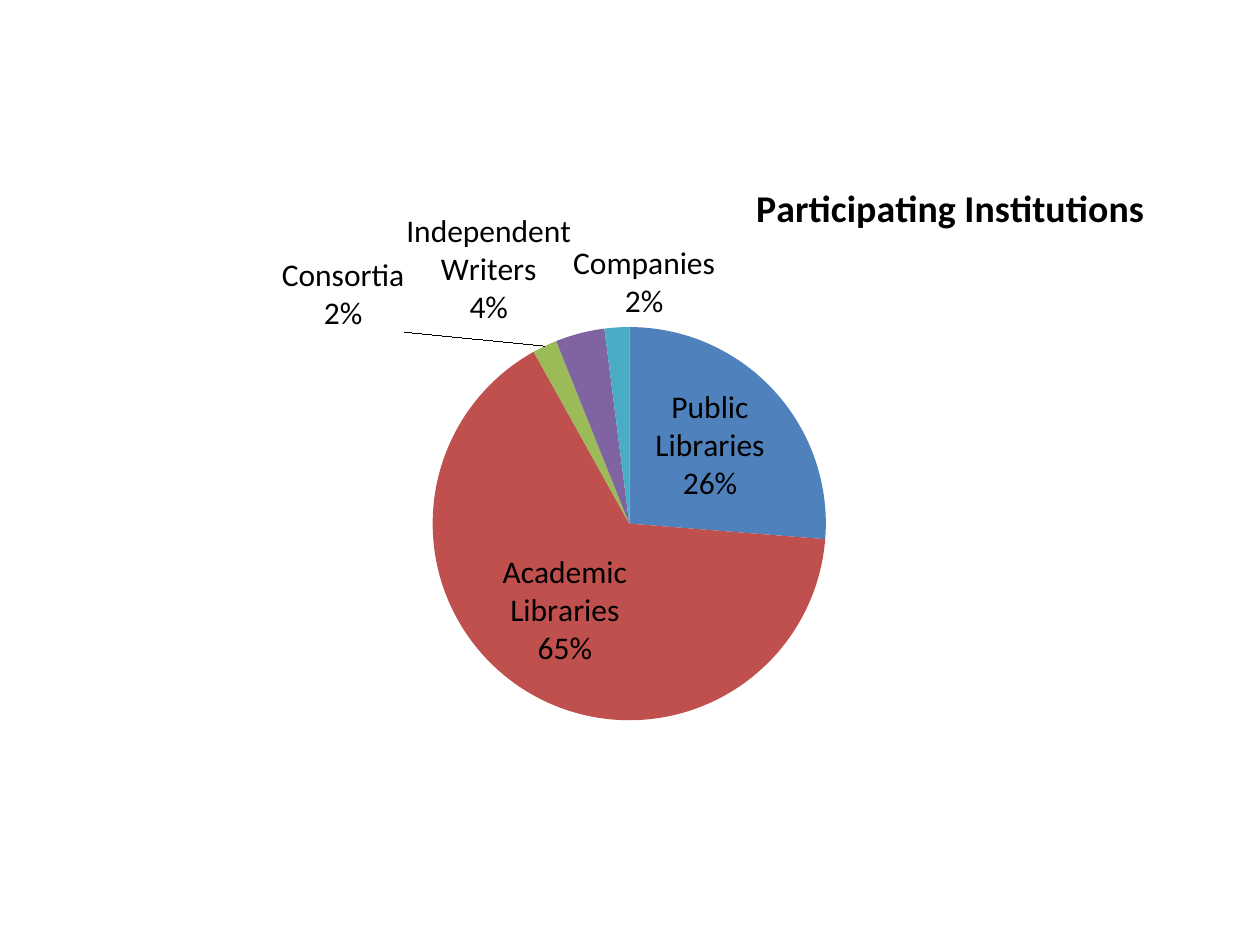
from typing import NamedTuple

from lxml import etree
from pptx import Presentation
from pptx import util as u
from pptx.chart.data import CategoryChartData
from pptx.dml.color import RGBColor
from pptx.enum import chart as ch
from pptx.oxml import ns

COLORS = {
    "text": "000000",
    "blue": "4F81BD",
    "red": "C0504D",
    "green": "9BBB59",
    "purple": "8064A2",
    "aqua": "4BACC6",
}
FONT = "Calibri"


class Institution(NamedTuple):
    category: str
    percent: int
    color: str


INSTITUTIONS = [
    Institution("Public Libraries", 26, "blue"),
    Institution("Academic Libraries", 65, "red"),
    Institution("Consortia", 2, "green"),
    Institution("Independent Writers", 4, "purple"),
    Institution("Companies", 2, "aqua"),
]


def rgb(name: str) -> RGBColor:
    return RGBColor.from_string(COLORS[name])


def style_font(font, size: float, bold: bool = False) -> None:
    font.name = FONT
    font.size = u.Pt(size)
    font.bold = bold
    font.color.rgb = rgb("text")


def manual_layout(**settings) -> etree._Element:
    """Layout element; settings are given in schema order."""
    layout = etree.Element(ns.qn("c:layout"))
    manual = etree.SubElement(layout, ns.qn("c:manualLayout"))
    for tag, value in settings.items():
        etree.SubElement(manual, ns.qn(f"c:{tag}")).set("val", str(value))
    return layout


def place(parent, layout: etree._Element, index: int) -> None:
    """Put the layout at its place, instead of any earlier one."""
    for earlier in parent.findall(ns.qn("c:layout")):
        parent.remove(earlier)
    parent.insert(index, layout)


def add_institution_pie(slide) -> None:
    shares = CategoryChartData(number_format="0")
    shares.categories = [item.category for item in INSTITUTIONS]
    shares.add_series("Series 1", [item.percent for item in INSTITUTIONS])
    pie = slide.shapes.add_chart(
        ch.XL_CHART_TYPE.PIE, u.Inches(0.5), u.Inches(0.92),
        u.Inches(9.08), u.Inches(5.78), shares).chart
    style_font(pie.font, 18)
    pie.has_legend = False

    # Title at the upper right
    heading = pie.chart_title
    run = heading.text_frame.paragraphs[0].add_run()
    run.text = "Participating Institutions"
    style_font(run.font, 21.6, bold=True)
    heading.include_in_layout = False
    place(heading._element, manual_layout(
        xMode="edge", yMode="edge", x=0.6, y=0.08), 1)

    # Slices
    plot = pie.plots[0]
    plot.vary_by_categories = True
    place(plot._element.getparent(), manual_layout(
        layoutTarget="inner", xMode="edge", yMode="edge",
        x=0.32, y=0.29, w=0.35, h=0.54), 0)
    series = plot.series[0]
    for index, item in enumerate(INSTITUTIONS):
        fill = series.points[index].format.fill
        fill.solid()
        fill.fore_color.rgb = rgb(item.color)

    # Labels: category above its rounded share
    labels = series.data_labels
    style_font(labels.font, 18)
    labels.number_format = '0"%"'
    labels.number_format_is_linked = False
    labels.position = ch.XL_LABEL_POSITION.BEST_FIT
    labels.show_category_name = True
    labels.show_value = True
    labels.show_percentage = False
    separator = etree.Element(ns.qn("c:separator"))
    separator.text = "\n"
    labels._element.find(ns.qn("c:showBubbleSize")).addnext(separator)
    leader = labels._element.find(ns.qn("c:showLeaderLines"))
    if leader is None:
        leader = etree.Element(ns.qn("c:showLeaderLines"))
        separator.addnext(leader)
    leader.set("val", "1")

    # Consortia sits away from its slice, on a leader line
    consortia = etree.Element(ns.qn("c:dLbl"))
    etree.SubElement(consortia, ns.qn("c:idx")).set("val", "2")
    consortia.append(manual_layout(x=-0.12, y=-0.01))
    for tag, value in [("dLblPos", "bestFit"), ("showLegendKey", "0"),
                       ("showVal", "1"), ("showCatName", "1"),
                       ("showSerName", "0"), ("showPercent", "0"),
                       ("showBubbleSize", "0")]:
        etree.SubElement(consortia, ns.qn(f"c:{tag}")).set("val", value)
    etree.SubElement(consortia, ns.qn("c:separator")).text = "\n"
    labels._element.insert(0, consortia)


def main() -> None:
    deck = Presentation()
    deck.slide_width, deck.slide_height = u.Inches(10), u.Inches(7.5)
    slide = deck.slides.add_slide(deck.slide_layouts[6])
    add_institution_pie(slide)
    deck.save("out.pptx")


if __name__ == "__main__":
    main()
